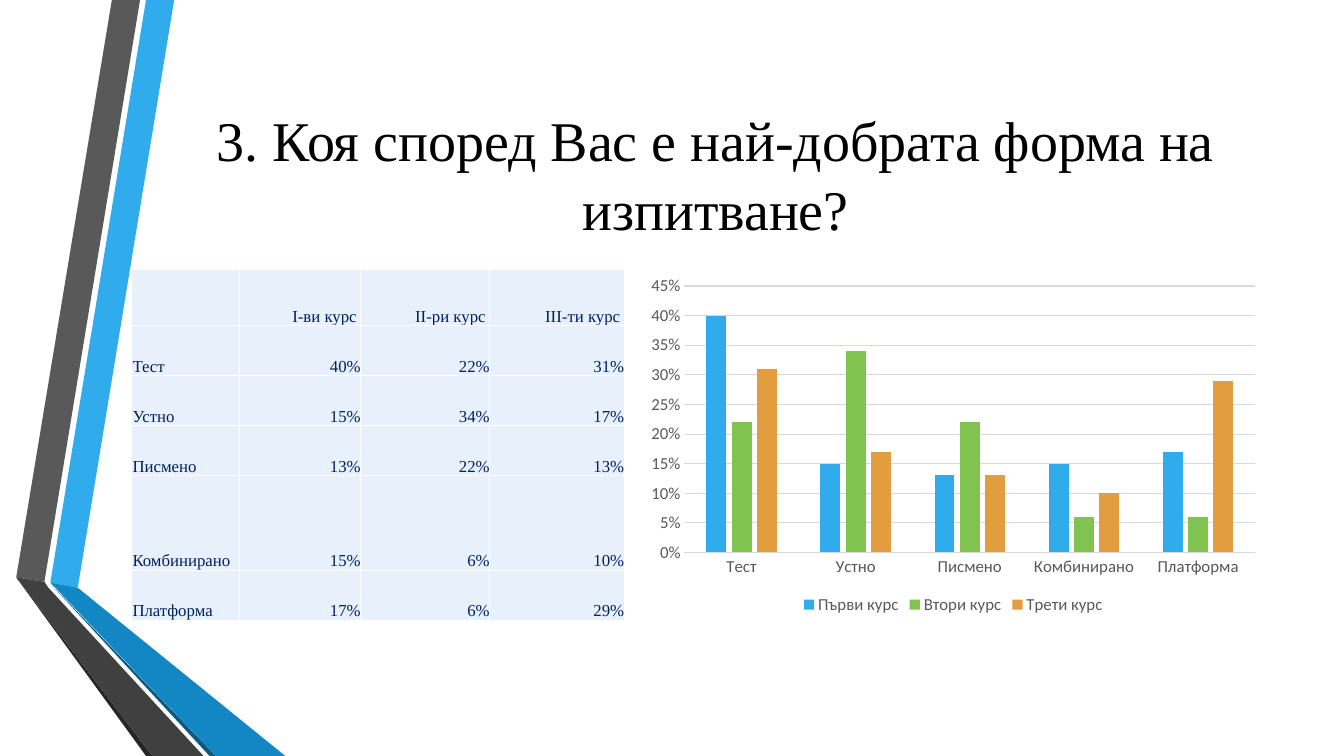
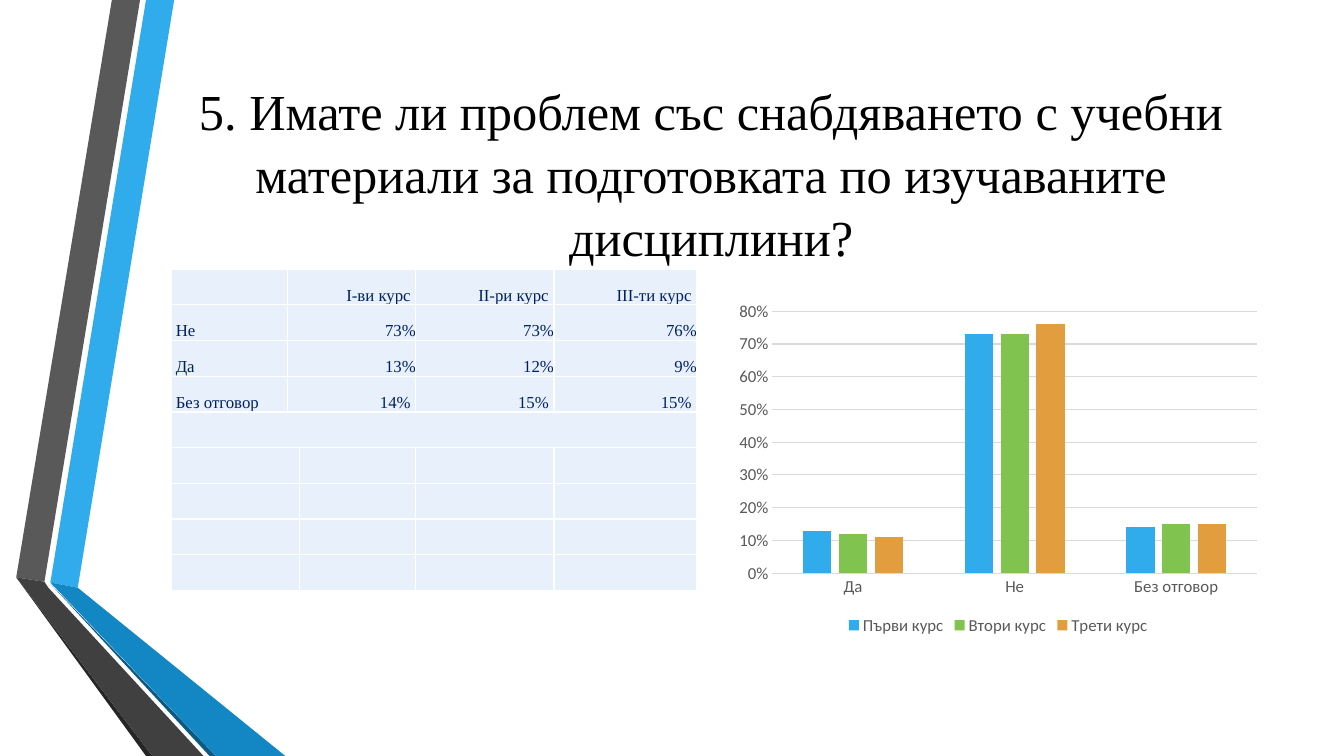
from dataclasses import dataclass

from lxml import etree
from pptx import Presentation
from pptx import util as u
from pptx.chart import data as chart_data
from pptx.dml.color import RGBColor
from pptx.enum import chart as c
from pptx.enum import text as t
from pptx.oxml.ns import qn

Cm, Pt = u.Cm, u.Pt
TITLE_ONLY = 5


@dataclass(frozen=True)
class Theme:
    title_font: str = "Times New Roman"
    chart_font: str = "Calibri"
    title_size: int = 40
    long_title_size: int = 36
    body_size: int = 12
    title_color: str = "000000"
    table_text: str = "002060"
    table_fill: str = "E8F1FB"
    table_border: str = "FFFFFF"
    chart_text: str = "595959"
    chart_line: str = "D9D9D9"
    series: tuple = ("30ACEC", "80C34F", "E29D3E")
    # Folded ribbon at the left: colour and corners in centimetres
    ribbon: tuple = (
        ("30ACEC", ((1.27, 14.68), (1.96, 14.81), (4.39, 0), (3.68, 0))),
        ("595959", ((3.53, 0), (2.82, 0), (0.41, 14.55), (1.12, 14.66))),
        ("262626", ((0.41, 14.55), (3.68, 19.05), (3.84, 19.05))),
        ("0C5A82", ((1.27, 14.71), (5.28, 19.05), (5.44, 19.05))),
        ("1287C3", ((1.27, 14.68), (5.44, 19.05), (7.19, 19.05),
                    (1.96, 14.81))),
        ("404040", ((5.13, 19.05), (1.22, 14.81), (1.12, 14.66),
                    (0.41, 14.55), (3.84, 19.05))),
    )


def rgb(color):
    return RGBColor.from_string(color)


def set_font(font, name, size, color):
    font.name = name
    font.size = Pt(size)
    font.color.rgb = rgb(color)


class Deck:
    def __init__(self, theme):
        self.theme = theme
        self.presentation = Presentation()
        self.presentation.slide_width = Cm(33.87)
        self.presentation.slide_height = Cm(19.05)
        self.layout = self.presentation.slide_layouts[TITLE_ONLY]
        self.slide = None

    def add_slide(self):
        is_first = self.slide is None
        self.slide = self.presentation.slides.add_slide(self.layout)
        if is_first:
            self.move_ribbon_to_layout()

    def move_ribbon_to_layout(self):
        """Draw the ribbon once and hand it to the layout all slides share."""
        for color, corners in self.theme.ribbon:
            start, *others = [(Cm(x), Cm(y)) for x, y in corners]
            builder = self.slide.shapes.build_freeform(*start)
            builder.add_line_segments(others, close=True)
            shape = builder.convert_to_shape()
            shape.shadow.inherit = False
            shape.fill.solid()
            shape.fill.fore_color.rgb = rgb(color)
            shape.line.fill.background()
            self.layout.shapes.element.append(shape.element)

    def title(self, wording, left, width, size):
        shape = self.slide.shapes.title
        shape.left, shape.top = Cm(left), Cm(1.9)
        shape.width, shape.height = Cm(width), Cm(4.88)
        frame = shape.text_frame
        frame.text = wording
        frame.word_wrap = True
        frame.auto_size = t.MSO_AUTO_SIZE.NONE
        frame.vertical_anchor = t.MSO_ANCHOR.MIDDLE
        paragraph = frame.paragraphs[0]
        paragraph.alignment = t.PP_ALIGN.CENTER
        paragraph.line_spacing = 1.04
        set_font(paragraph.font, self.theme.title_font, size,
                 self.theme.title_color)

    def table(self, left, rows, widths, heights, merges=(), label_inset=0.02,
              value_inset=0.1, inset_rows=(0,)):
        """Add a table; values in inset_rows stand off the right border."""
        frame = self.slide.shapes.add_table(
            len(rows), len(widths), Cm(left), Cm(6.78),
            Cm(sum(widths)), Cm(sum(heights)))
        table = frame.table
        table.first_row = table.horz_banding = False
        for column, width in zip(table.columns, widths):
            column.width = Cm(width)
        for row, height in zip(table.rows, heights):
            row.height = Cm(height)
        for row_index, values in enumerate(rows):
            for column_index, value in enumerate(values):
                cell = table.cell(row_index, column_index)
                self.format_cell(cell)
                cell.margin_left = Cm(label_inset)
                if row_index in inset_rows:
                    cell.margin_right = Cm(value_inset)
                if value:
                    self.fill_cell(cell, value, column_index > 0)
        for row_index, first, last in merges:
            table.cell(row_index, first).merge(table.cell(row_index, last))

    def format_cell(self, cell):
        cell.fill.solid()
        cell.fill.fore_color.rgb = rgb(self.theme.table_fill)
        cell.vertical_anchor = t.MSO_ANCHOR.BOTTOM
        cell.margin_right = cell.margin_top = cell.margin_bottom = 0
        properties = cell.fill._xPr
        for position, side in enumerate(("lnL", "lnR", "lnT", "lnB")):
            line = etree.Element(qn(f"a:{side}"), w=str(Pt(1)))
            fill = etree.SubElement(line, qn("a:solidFill"))
            etree.SubElement(fill, qn("a:srgbClr"),
                             val=self.theme.table_border)
            properties.insert(position, line)

    def fill_cell(self, cell, value, is_value):
        cell.text = value
        paragraph = cell.text_frame.paragraphs[0]
        paragraph.alignment = (t.PP_ALIGN.RIGHT if is_value
                               else t.PP_ALIGN.LEFT)
        set_font(paragraph.font, self.theme.title_font, self.theme.body_size,
                 self.theme.table_text)

    def column_chart(self, box, categories, series, maximum, step):
        theme = self.theme
        data = chart_data.CategoryChartData(number_format="0%")
        data.categories = categories
        for name, values in series:
            data.add_series(name, values)
        chart = self.slide.shapes.add_chart(
            c.XL_CHART_TYPE.COLUMN_CLUSTERED,
            *[Cm(length) for length in box], data).chart
        set_font(chart.font, theme.chart_font, theme.body_size,
                 theme.chart_text)
        chart.has_title = False
        chart.has_legend = True
        chart.legend.position = c.XL_LEGEND_POSITION.BOTTOM
        chart.legend.include_in_layout = False

        plot = chart.plots[0]
        plot.vary_by_categories = False
        plot.gap_width, plot.overlap = 219, -27
        for bars, color in zip(plot.series, theme.series):
            bars.format.fill.solid()
            bars.format.fill.fore_color.rgb = rgb(color)

        value_axis, category_axis = chart.value_axis, chart.category_axis
        for axis in (value_axis, category_axis):
            axis.major_tick_mark = axis.minor_tick_mark = c.XL_TICK_MARK.NONE
        value_axis.minimum_scale, value_axis.maximum_scale = 0, maximum
        value_axis.major_unit = step
        value_axis.tick_labels.number_format = "0%"
        value_axis.tick_labels.number_format_is_linked = False
        value_axis.format.line.fill.background()
        for line in (value_axis.major_gridlines.format.line,
                     category_axis.format.line):
            line.color.rgb = rgb(theme.chart_line)
            line.width = Pt(0.75)


COURSES = ("Първи курс", "Втори курс", "Трети курс")
HEADINGS = ("I-ви курс", "II-ри курс", "III-ти курс")


def exam_form_slide(deck):
    forms = ("Тест", "Устно", "Писмено", "Комбинирано", "Платформа")
    shares = ((0.4, 0.15, 0.13, 0.15, 0.17),
              (0.22, 0.34, 0.22, 0.06, 0.06),
              (0.31, 0.17, 0.13, 0.1, 0.29))
    rows = [("", *HEADINGS)]
    for form, *values in zip(forms, *shares):
        rows.append((form, *[f"{value:.0%}" for value in values]))

    deck.add_slide()
    deck.title("3. Коя според Вас е най-добрата форма на изпитване?",
               4.11, 27.84, deck.theme.title_size)
    deck.table(3.32, rows, (2.72, 3.05, 3.25, 3.39),
               (1.43, 1.26, 1.26, 1.26, 2.38, 1.26))
    deck.column_chart((16.1, 6.78, 15.85, 8.81), forms,
                      zip(COURSES, shares), 0.45, 0.05)


def supplies_slide(deck):
    first, second, third = HEADINGS
    rows = [("", first, "", second, third),
            ("Не", "73%", "", "73%", "76%"),
            ("Да", "13%", "", "12%", "9%"),
            ("Без отговор", "14%", "", "15%", "15%")]
    rows += [("",) * 5] * 5
    merges = [(row, 1, 2) for row in range(4)]
    merges += [(4, 0, 4)]
    merges += [(row, 0, 1) for row in range(5, 9)]
    shares = ((0.13, 0.73, 0.14), (0.12, 0.73, 0.15), (0.11, 0.76, 0.15))

    deck.add_slide()
    deck.title("5. Имате ли проблем със снабдяването с учебни материали "
               "за подготовката по изучаваните дисциплини?",
               3.89, 28.07, deck.theme.long_title_size)
    deck.table(4.33, rows, (2.92, 0.29, 2.94, 3.48, 3.6), (0.9,) * 9,
               merges, label_inset=0.1, value_inset=0.13, inset_rows=(0, 3))
    deck.column_chart((18.36, 7.42, 13.59, 8.69),
                      ("Да", "Не", "Без отговор"),
                      zip(COURSES, shares), 0.8, 0.1)


def main():
    deck = Deck(Theme())
    exam_form_slide(deck)
    supplies_slide(deck)
    deck.presentation.save("out.pptx")


if __name__ == "__main__":
    main()
